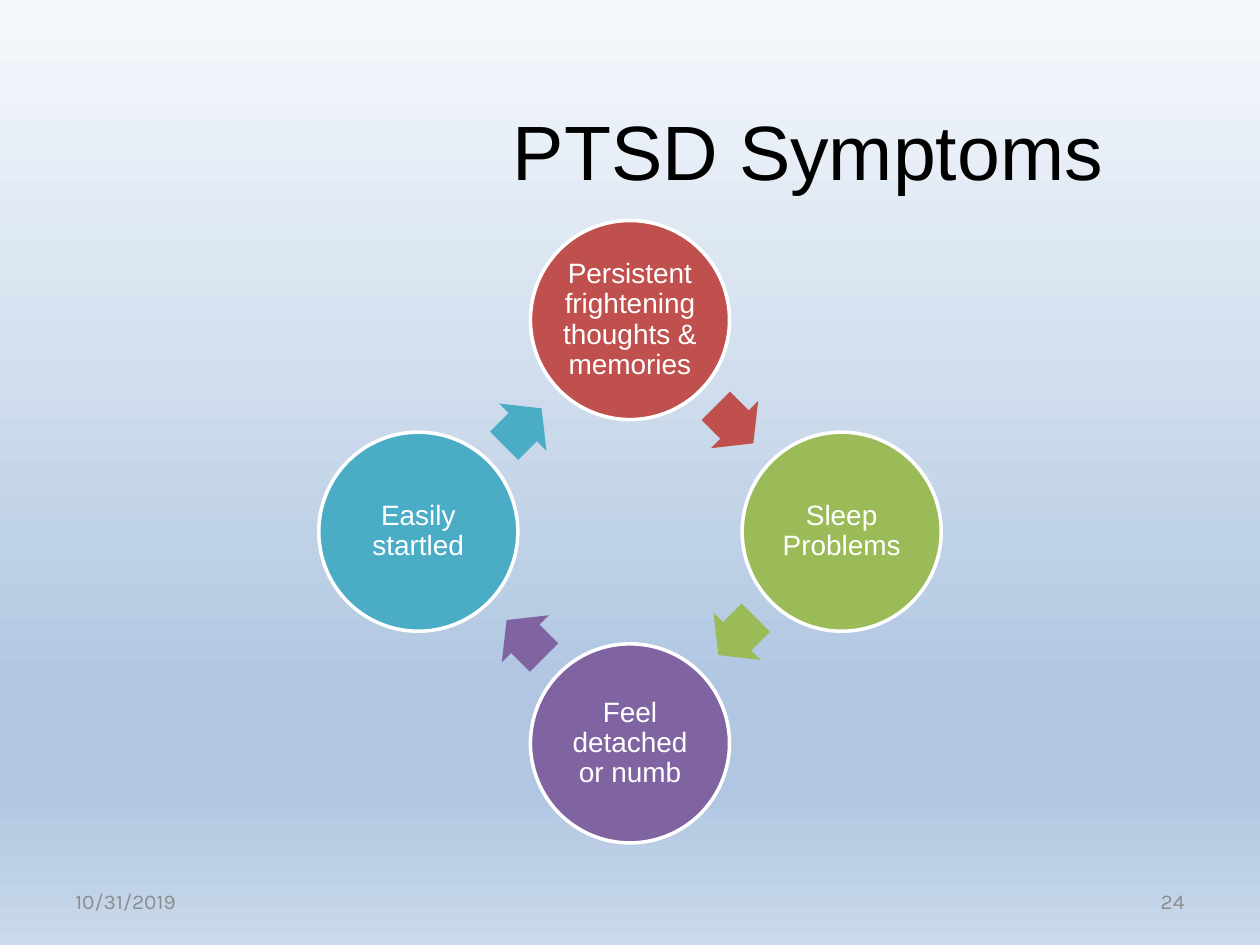
from dataclasses import dataclass
from math import cos, radians, sin

from pptx import Presentation
from pptx.dml.color import RGBColor
from pptx.enum.shapes import MSO_SHAPE as Shape
from pptx.enum.text import MSO_ANCHOR as Anchor, PP_ALIGN as Align
from pptx.oxml import parse_xml
from pptx.oxml.ns import nsdecls
from pptx.util import Inches, Pt

COLORS = {
    "black": "000000", "white": "FFFFFF", "gray": "8C8C8C",
    "red": "C0504D", "green": "9BBB59", "purple": "8064A2", "teal": "4BACC6",
    "sky": "F6F9FC", "blue": "B0C6E1", "haze": "CAD9EB",
}
BACKGROUND = [(0, "sky"), (74, "blue"), (83, "blue"), (100, "haze")]

# Cycle geometry, in inches
CENTER_X, CENTER_Y, RADIUS = 5, 4.22, 1.68
CIRCLE = 1.58
ARROW_W, ARROW_H = 0.42, 0.53
ARROW_DX, ARROW_DY = 0.83, -0.85


@dataclass
class Symptom:
    text: str
    color: str


@dataclass
class Label:
    text: str
    box: tuple[float, float, float, float]
    size: int
    font: str
    color: str
    align: Align


SYMPTOMS = [  # clockwise from the top
    Symptom("Persistent frightening thoughts & memories", "red"),
    Symptom("Sleep Problems", "green"),
    Symptom("Feel detached or numb", "purple"),
    Symptom("Easily startled", "teal"),
]
LABELS = [
    Label("PTSD Symptoms", (3.08, 0.67, 6.67, 1.03), 44, "Arial", "black", Align.CENTER),
    Label("10/31/2019", (0.5, 6.95, 2.33, 0.4), 12, "Karla", "gray", Align.LEFT),
    Label("24", (7.17, 6.95, 2.33, 0.4), 12, "Karla", "gray", Align.RIGHT),
]


def rgb(name: str) -> RGBColor:
    return RGBColor.from_string(COLORS[name])


def set_background(slide) -> None:
    stops = "".join(
        f'<a:gs pos="{pos * 1000}"><a:srgbClr val="{COLORS[name]}"/></a:gs>'
        for pos, name in BACKGROUND
    )
    slide.element.cSld.insert(0, parse_xml(
        f'<p:bg {nsdecls("p", "a")}><p:bgPr><a:gradFill><a:gsLst>{stops}</a:gsLst>'
        '<a:lin ang="5400000" scaled="0"/></a:gradFill><a:effectLst/></p:bgPr></p:bg>'
    ))


def write(sp, text: str, size: int, font: str, color: str, align: Align):
    tf = sp.text_frame
    tf.word_wrap = True
    tf.vertical_anchor = Anchor.MIDDLE
    tf.text = text
    p = tf.paragraphs[0]
    p.alignment = align
    f = p.runs[0].font
    f.size, f.name, f.color.rgb = Pt(size), font, rgb(color)
    return tf


def add_label(slide, label: Label) -> None:
    sp = slide.shapes.add_textbox(*map(Inches, label.box))
    write(sp, label.text, label.size, label.font, label.color, label.align)


def add_centered(slide, kind: Shape, x: float, y: float, w: float, h: float, color: str):
    sp = slide.shapes.add_shape(
        kind, Inches(x - w / 2), Inches(y - h / 2), Inches(w), Inches(h))
    sp.shadow.inherit = False
    sp.fill.solid()
    sp.fill.fore_color.rgb = rgb(color)
    return sp


def add_circle(slide, symptom: Symptom, turn: int) -> None:
    a = radians(turn)
    sp = add_centered(slide, Shape.OVAL, CENTER_X + RADIUS * sin(a),
                      CENTER_Y - RADIUS * cos(a), CIRCLE, CIRCLE, symptom.color)
    sp.line.color.rgb = rgb("white")
    sp.line.width = Pt(2)
    tf = write(sp, symptom.text, 16, "Arial", "white", Align.CENTER)
    tf.margin_left = tf.margin_right = tf.margin_top = tf.margin_bottom = Inches(0.02)
    tf.paragraphs[0].line_spacing = 0.9


def add_arrow(slide, color: str, turn: int) -> None:
    a = radians(turn)
    x = CENTER_X + ARROW_DX * cos(a) - ARROW_DY * sin(a)
    y = CENTER_Y + ARROW_DX * sin(a) + ARROW_DY * cos(a)
    sp = add_centered(slide, Shape.RIGHT_ARROW, x, y, ARROW_W, ARROW_H, color)
    sp.line.fill.background()
    sp.adjustments[0], sp.adjustments[1] = 0.6, 0.5
    sp.rotation = 45 + turn


def main() -> None:
    prs = Presentation()
    prs.slide_width, prs.slide_height = Inches(10), Inches(7.5)
    s = prs.slides.add_slide(prs.slide_layouts[6])
    set_background(s)

    # Title, date and slide number
    for label in LABELS:
        add_label(s, label)

    # Cycle of symptoms, each followed by its arrow
    for i, symptom in enumerate(SYMPTOMS):
        turn = i * 360 // len(SYMPTOMS)
        add_circle(s, symptom, turn)
        add_arrow(s, symptom.color, turn)

    prs.save("out.pptx")


if __name__ == "__main__":
    main()
